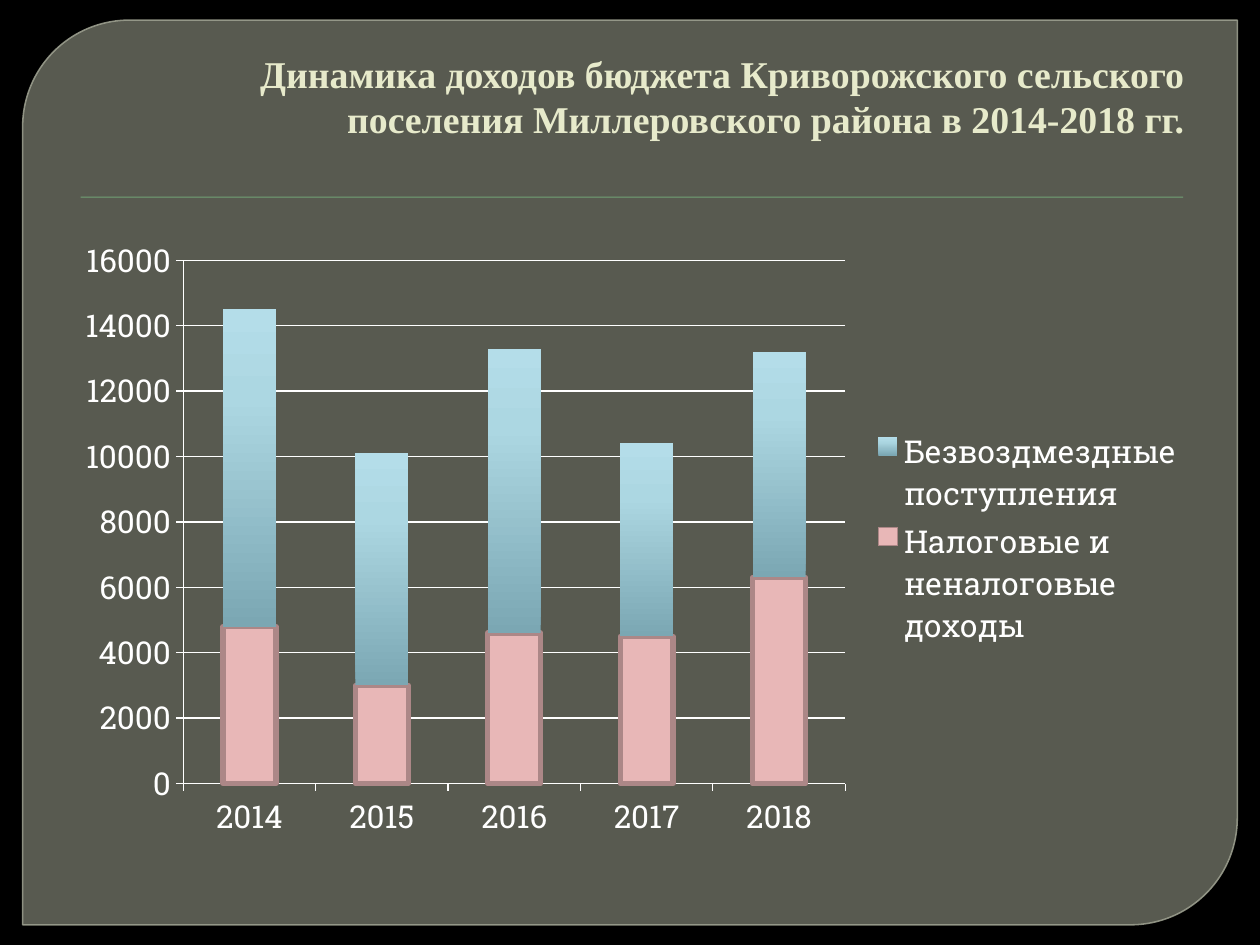
from lxml import etree
from pptx import Presentation
from pptx.chart.data import CategoryChartData
from pptx.dml.color import RGBColor
from pptx.enum.chart import XL_CHART_TYPE, XL_LEGEND_POSITION, XL_TICK_MARK
from pptx.enum.shapes import MSO_SHAPE
from pptx.enum.text import MSO_ANCHOR, PP_ALIGN
from pptx.oxml import parse_xml
from pptx.oxml.ns import nsdecls, qn
from pptx.util import Inches, Pt

# Content
TITLE = ("Динамика доходов бюджета Криворожского сельского "
         "поселения Миллеровского района в 2014-2018 гг.")
YEARS = ["2014", "2015", "2016", "2017", "2018"]
INCOME = {
    "Налоговые и неналоговые доходы": (4800, 3000, 4600, 4500, 6300),
    "Безвоздмездные поступления": (9700, 7100, 8700, 5900, 6900),
}
COLORS = {
    "back": "000000", "panel": "888B7B", "edge": "9DA090", "rule": "72A376",
    "title": "E7EACB", "text": "FFFFFF", "tax": "E8B7B7", "tax_edge": "AC8787",
}
GRANT_STOPS = [(0, "7BA7B3"), (72, "ACD7E2"), (100, "B4DDE9")]


def rgb(name):
    return RGBColor.from_string(COLORS[name])


def set_alpha(parent, percent):
    clr = next(parent.iter(qn("a:srgbClr")))
    etree.SubElement(clr, qn("a:alpha")).set("val", str(percent * 1000))


def add_box(s, kind, box, fill):
    sp = s.shapes.add_shape(kind, *map(Inches, box))
    sp.shadow.inherit = False
    sp.fill.solid()
    sp.fill.fore_color.rgb = rgb(fill)
    sp.line.fill.background()
    return sp


prs = Presentation()
prs.slide_width, prs.slide_height = Inches(10), Inches(7.5)
s = prs.slides.add_slide(prs.slide_layouts[6])
s.background.fill.solid()
s.background.fill.fore_color.rgb = rgb("back")

# Panel with two rounded corners, and the rule below the title
panel = add_box(s, MSO_SHAPE.ROUND_2_DIAG_RECTANGLE, (0.18, 0.16, 9.64, 7.18), "panel")
panel.adjustments[0], panel.adjustments[1] = 0.118, 0
set_alpha(panel.fill._xPr.find(qn("a:solidFill")), 65)
panel.line.color.rgb = rgb("edge")
panel.line.width = Pt(0.87)
set_alpha(panel.line._ln, 88)
add_box(s, MSO_SHAPE.RECTANGLE, (0.64, 1.56, 8.75, 0.01), "rule")

# Title
tf = s.shapes.add_textbox(Inches(0.5), Inches(0.28), Inches(9), Inches(1.25)).text_frame
tf.word_wrap = True
tf.vertical_anchor = MSO_ANCHOR.BOTTOM
tf.margin_bottom = Inches(0.41)
p = tf.paragraphs[0]
p.text = TITLE
p.alignment = PP_ALIGN.RIGHT
p.font.name, p.font.size, p.font.bold = "Times New Roman", Pt(21.6), True
p.font.color.rgb = rgb("title")

# Stacked chart
data = CategoryChartData()
data.categories = YEARS
for name, values in INCOME.items():
    data.add_series(name, values)
chart = s.shapes.add_chart(XL_CHART_TYPE.COLUMN_STACKED, Inches(0.5), Inches(1.8),
                           Inches(9), Inches(4.95), data).chart
chart.has_title = False
chart.font.name, chart.font.size = "Roboto Slab", Pt(18)
chart.font.color.rgb = rgb("text")
chart.has_legend = True
chart.legend.position = XL_LEGEND_POSITION.RIGHT
chart.legend.include_in_layout = False

plot = chart.plots[0]
plot.gap_width, plot.overlap = 150, 100
plot.vary_by_categories = False
tax, grant = plot.series
tax.format.fill.solid()
tax.format.fill.fore_color.rgb = rgb("tax")
tax.format.line.color.rgb = rgb("tax_edge")
tax.format.line.width = Pt(3)

# Three-stop gradient, dark at the foot of the column
stops = "".join(f'<a:gs pos="{pos * 1000}"><a:srgbClr val="{c}"/></a:gs>'
                for pos, c in GRANT_STOPS)
grant.format.line.fill.background()
grant.format.fill._xPr.insert(0, parse_xml(
    f'<a:gradFill {nsdecls("a")}><a:gsLst>{stops}</a:gsLst>'
    '<a:lin ang="16200000" scaled="0"/></a:gradFill>'))

# Axes
chart.value_axis.has_major_gridlines = True
lines = [chart.value_axis.major_gridlines.format.line]
for axis in (chart.category_axis, chart.value_axis):
    axis.major_tick_mark = XL_TICK_MARK.OUTSIDE
    lines.append(axis.format.line)
for line in lines:
    line.color.rgb = rgb("text")
    line.width = Pt(0.75)

prs.save("out.pptx")
